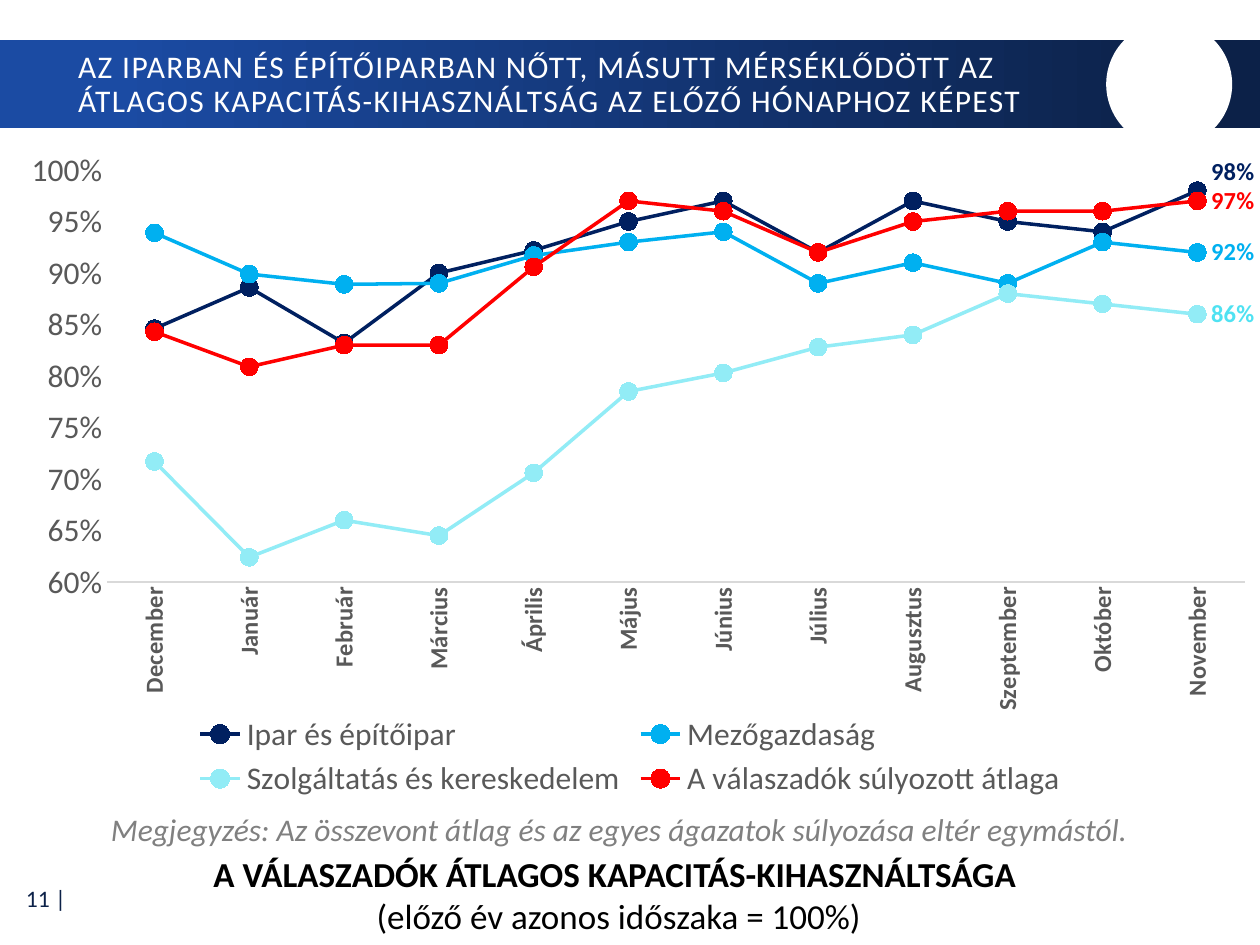
from collections import namedtuple
from dataclasses import dataclass

from lxml.etree import SubElement
from pptx import Presentation
from pptx.chart.data import CategoryChartData
from pptx.dml.color import RGBColor
from pptx.enum.chart import XL_CHART_TYPE as ChartType
from pptx.enum.chart import XL_LABEL_POSITION as LabelPosition
from pptx.enum.chart import XL_LEGEND_POSITION as LegendPosition
from pptx.enum.chart import XL_MARKER_STYLE as MarkerStyle
from pptx.enum.chart import XL_TICK_MARK as TickMark
from pptx.enum.shapes import MSO_SHAPE as Shape
from pptx.enum.text import MSO_ANCHOR as Anchor
from pptx.enum.text import MSO_AUTO_SIZE as AutoSize
from pptx.enum.text import PP_ALIGN as Align
from pptx.oxml.ns import qn
from pptx.util import Cm, Pt

Box = namedtuple("Box", "left top width height")


@dataclass(frozen=True)
class Theme:
    font: str = "Calibri"
    blue: str = "1B4BA3"
    navy: str = "0C2148"
    white: str = "FFFFFF"
    black: str = "000000"
    note: str = "808080"
    axis_text: str = "595959"
    axis_line: str = "D9D9D9"
    caption_size: float = 20
    text_size: float = 18
    label_size: float = 14
    number_size: float = 13.5


THEME = Theme()

MONTHS = ["December", "Január", "Február", "Március", "Április", "Május",
          "Június", "Július", "Augusztus", "Szeptember", "Október", "November"]

# name, line colour, label colour, values
SECTORS = [
    ("Ipar és építőipar", "002060", "002060",
     [0.846, 0.886, 0.832, 0.9, 0.922, 0.95, 0.97, 0.92, 0.97, 0.95, 0.94, 0.98]),
    ("Mezőgazdaság", "00B0F0", "00B0F0",
     [0.939, 0.899, 0.889, 0.89, 0.917, 0.93, 0.94, 0.89, 0.91, 0.89, 0.93, 0.92]),
    ("Szolgáltatás és kereskedelem", "92ECF6", "4FE2F2",
     [0.717, 0.624, 0.66, 0.645, 0.706, 0.785, 0.803, 0.828, 0.84, 0.88, 0.87, 0.86]),
    ("A válaszadók súlyozott átlaga", "FF0000", "FF0000",
     [0.843, 0.809, 0.83, 0.83, 0.906, 0.97, 0.96, 0.92, 0.95, 0.96, 0.96, 0.97]),
]


def rgb(value):
    return RGBColor.from_string(value)


def style_font(font, size, colour, bold=False, italic=False):
    font.name = THEME.font
    font.size = Pt(size)
    font.color.rgb = rgb(colour)
    font.bold = bold
    font.italic = italic


def place(shape, box):
    shape.left, shape.top, shape.width, shape.height = (Cm(length) for length in box)


def add_span(para, text, size, colour, **style):
    span = para.add_run()
    span.text = text
    style_font(span.font, size, colour, **style)
    return span


def add_plain_shape(page, kind, box):
    shape = page.shapes.add_shape(kind, *(Cm(length) for length in box))
    shape.shadow.inherit = False
    shape.line.fill.background()
    return shape


def add_text(page, box, lines, align, anchor=Anchor.TOP):
    """Each line is (text, size, colour, style) and becomes a paragraph."""
    frame = page.shapes.add_textbox(*(Cm(length) for length in box)).text_frame
    frame.word_wrap = True
    frame.vertical_anchor = anchor
    for index, (text, size, colour, style) in enumerate(lines):
        para = frame.add_paragraph() if index else frame.paragraphs[0]
        para.alignment = align
        add_span(para, text, size, colour, **style)


def add_header(page, box, text):
    band = add_plain_shape(page, Shape.RECTANGLE, box)
    band.fill.gradient()
    band.fill.gradient_angle = 0
    stops = ((0.09, THEME.blue), (0.95, THEME.navy))
    for stop, (position, colour) in zip(band.fill.gradient_stops, stops):
        stop.position = position
        stop.color.rgb = rgb(colour)

    size = 2.54
    circle = add_plain_shape(page, Shape.OVAL, Box(
        box.left + box.width - 3.1, box.top - 0.38, size, size))
    circle.fill.solid()
    circle.fill.fore_color.rgb = rgb(THEME.white)

    title = page.shapes.title
    page.shapes._spTree.append(title._element)  # in front of the band
    place(title, Box(box.left + 1.32, box.top + 0.05, 21.13, box.height - 0.08))
    frame = title.text_frame
    frame.word_wrap = True
    frame.auto_size = AutoSize.NONE
    frame.vertical_anchor = Anchor.MIDDLE
    para = frame.paragraphs[0]
    para.alignment = Align.LEFT
    para.line_spacing = 0.9
    span = add_span(para, text, THEME.text_size, THEME.white)
    span.font._element.set("spc", "80")


def add_layout(parent, index, **values):
    """Insert a manual chart layout as the given child of parent."""
    layout = SubElement(parent, qn("c:layout"))
    parent.insert(index, layout)
    manual = SubElement(layout, qn("c:manualLayout"))
    for name, value in values.items():
        SubElement(manual, qn(f"c:{name}")).set("val", str(value))


def style_axes(chart):
    months, shares = chart.category_axis, chart.value_axis
    for axis in (months, shares):
        axis.has_major_gridlines = False
        axis.major_tick_mark = axis.minor_tick_mark = TickMark.NONE
    style_font(months.tick_labels.font, THEME.label_size, THEME.axis_text, bold=True)
    months._element.find(f"{qn('c:txPr')}/{qn('a:bodyPr')}").set("rot", "-5400000")
    months.format.line.color.rgb = rgb(THEME.axis_line)
    months.format.line.width = Pt(0.75)
    style_font(shares.tick_labels.font, THEME.text_size, THEME.axis_text)
    shares.tick_labels.number_format = "0%"
    shares.tick_labels.number_format_is_linked = False
    shares.format.line.fill.background()
    shares.minimum_scale, shares.maximum_scale, shares.major_unit = 0.6, 1, 0.05


def style_series(series, colour, label_colour):
    series.smooth = False
    series.format.line.color.rgb = rgb(colour)
    series.format.line.width = Pt(2)
    marker = series.marker
    marker.style, marker.size = MarkerStyle.CIRCLE, 10
    marker.format.fill.solid()
    marker.format.fill.fore_color.rgb = rgb(colour)
    marker.format.line.color.rgb = rgb(colour)
    label = series.points[len(MONTHS) - 1].data_label
    style_font(label.font, THEME.label_size, label_colour, bold=True)
    label.position = LabelPosition.RIGHT


def add_capacity_chart(page, box):
    data = CategoryChartData(number_format="0%")
    data.categories = MONTHS
    for name, _, _, values in SECTORS:
        data.add_series(name, values)
    chart = page.shapes.add_chart(
        ChartType.LINE_MARKERS, *(Cm(length) for length in box), data).chart
    style_font(chart.font, THEME.text_size, THEME.black)
    chart.has_title = False
    chart.has_legend = True
    chart.legend.position = LegendPosition.BOTTOM
    chart.legend.include_in_layout = False
    style_font(chart.legend.font, THEME.text_size, THEME.axis_text)
    style_axes(chart)
    plot = chart.plots[0]
    plot.vary_by_categories = False
    for series, (_, colour, label_colour, _) in zip(plot.series, SECTORS):
        style_series(series, colour, label_colour)

    area = chart._chartSpace.chart.plotArea
    for old in area.findall(qn("c:layout")):
        area.remove(old)
    add_layout(area, 0, layoutTarget="inner", xMode="edge", yMode="edge",
               x=0.085, y=0.063, w=0.903, h=0.609)
    # Lift the top label clear of the one below it
    top_label = next(area.iter(qn("c:dLbl")))
    add_layout(top_label, 1, x=0, y=-0.028)


def add_footer(page, box):
    add_text(page, Box(box.left + 0.89, box.top, 23.19, 1.02), [
        ("Megjegyzés: Az összevont átlag és az egyes ágazatok súlyozása eltér egymástól.",
         THEME.text_size, THEME.note, {"italic": True})], Align.CENTER)
    add_text(page, Box(box.left + 2.24, box.top + 0.86, 20.47, 1.96), [
        ("A VÁLASZADÓK ÁTLAGOS KAPACITÁS-KIHASZNÁLTSÁGA ",
         THEME.caption_size, THEME.black, {"bold": True}),
        ("(előző év azonos időszaka = 100%)",
         THEME.caption_size, THEME.black, {})], Align.CENTER)
    add_text(page, Box(box.left + 0.03, box.top + 1.42, 1.55, 0.94), [
        ("11 |", THEME.number_size, THEME.navy, {})], Align.RIGHT, Anchor.MIDDLE)


def main():
    deck = Presentation()
    deck.slide_width, deck.slide_height = Cm(25.4), Cm(19.05)
    page = deck.slides.add_slide(deck.slide_layouts.get_by_name("Title Only"))
    add_header(page, Box(0, 0.81, 25.4, 1.78),
               "AZ IPARBAN ÉS ÉPÍTŐIPARBAN NŐTT, MÁSUTT MÉRSÉKLŐDÖTT AZ "
               "ÁTLAGOS KAPACITÁS-KIHASZNÁLTSÁG AZ ELŐZŐ HÓNAPHOZ KÉPEST")
    add_capacity_chart(page, Box(0, 2.57, 25.4, 13.64))
    add_footer(page, Box(0, 16.21, 25.4, 2.84))
    deck.save("out.pptx")


if __name__ == "__main__":
    main()
